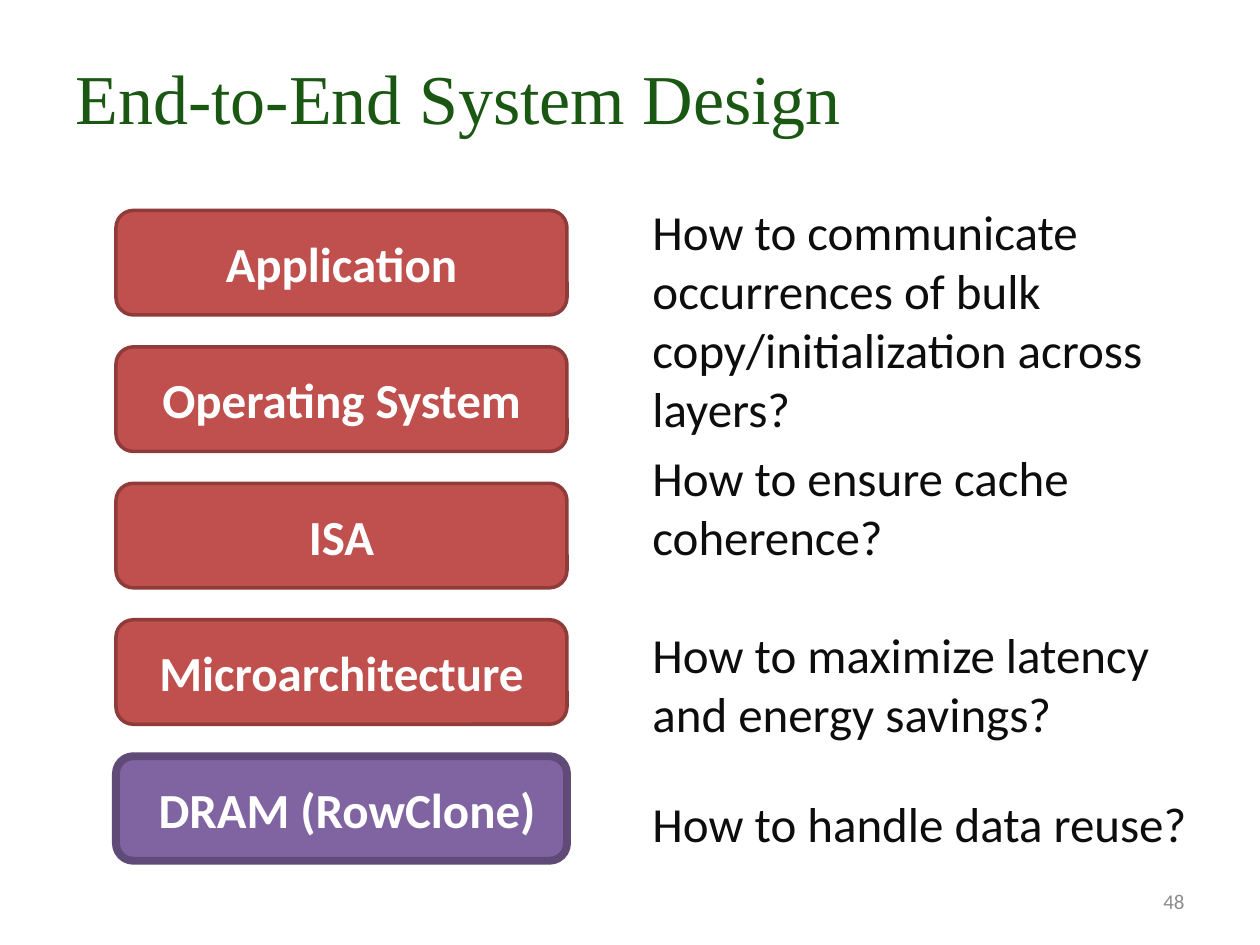
from pptx import Presentation
from pptx.dml.color import RGBColor
from pptx.enum.shapes import MSO_SHAPE
from pptx.enum.text import MSO_ANCHOR, PP_ALIGN
from pptx.util import Inches, Pt

TITLE = "End-to-End System Design"
PAGE_NUMBER = "48"
RED = ("C0504D", "8E3B39", 2)
PURPLE = ("8064A2", "5F4A78", 4.5)
LAYERS = [
    ("Application", RED),
    ("Operating System", RED),
    ("ISA", RED),
    ("Microarchitecture", RED),
    (" DRAM (RowClone)", PURPLE),
]
QUESTIONS = [
    ("How to communicate occurrences of bulk copy/initialization across layers?", 1.55, 1.51),
    ("How to ensure cache coherence?", 3.5, 1.99),
    ("How to maximize latency and energy savings?", 4.91, 1.04),
    ("How to handle data reuse?", 6.25, 0.57),
]
LAYER_TOP, LAYER_STEP = 1.67, 1.083


def color(value):
    return RGBColor.from_string(value)


def write(shape, text, size, ink, align=PP_ALIGN.LEFT, anchor=MSO_ANCHOR.MIDDLE,
          font="Calibri", bold=False):
    frame = shape.text_frame
    frame.word_wrap = True
    frame.vertical_anchor = anchor
    para = frame.paragraphs[0]
    para.alignment = align
    span = para.add_run()
    span.text = text
    span.font.name = font
    span.font.size = Pt(size)
    span.font.bold = bold
    span.font.color.rgb = color(ink)


def add_layer(page, text, style, top):
    fill, line, width = style
    box = page.shapes.add_shape(MSO_SHAPE.ROUNDED_RECTANGLE, Inches(0.92), Inches(top),
                                Inches(3.58), Inches(0.83))
    box.shadow.inherit = False
    box.fill.solid()
    box.fill.fore_color.rgb = color(fill)
    box.line.color.rgb = color(line)
    box.line.width = Pt(width)
    write(box, text, 28, "FFFFFF", PP_ALIGN.CENTER, bold=True)


def add_text(page, left, top, width, height):
    return page.shapes.add_textbox(Inches(left), Inches(top), Inches(width), Inches(height))


def main():
    deck = Presentation()
    deck.slide_width, deck.slide_height = Inches(10), Inches(7.5)
    page = deck.slides.add_slide(deck.slide_layouts[5])

    title = page.shapes.title
    title.left, title.top = Inches(0.5), Inches(0.14)
    title.width, title.height = Inches(9), Inches(1.25)
    write(title, TITLE, 40, "1A5712", font="Times New Roman")

    for index, (text, style) in enumerate(LAYERS):
        add_layer(page, text, style, LAYER_TOP + index * LAYER_STEP)

    for text, top, height in QUESTIONS:
        write(add_text(page, 5.08, top, 4.58, height), text, 28, "0D0D0D",
              anchor=MSO_ANCHOR.TOP)

    write(add_text(page, 7.17, 6.95, 2.33, 0.4), PAGE_NUMBER, 12, "8C8C8C", PP_ALIGN.RIGHT)

    deck.save("out.pptx")


if __name__ == "__main__":
    main()
